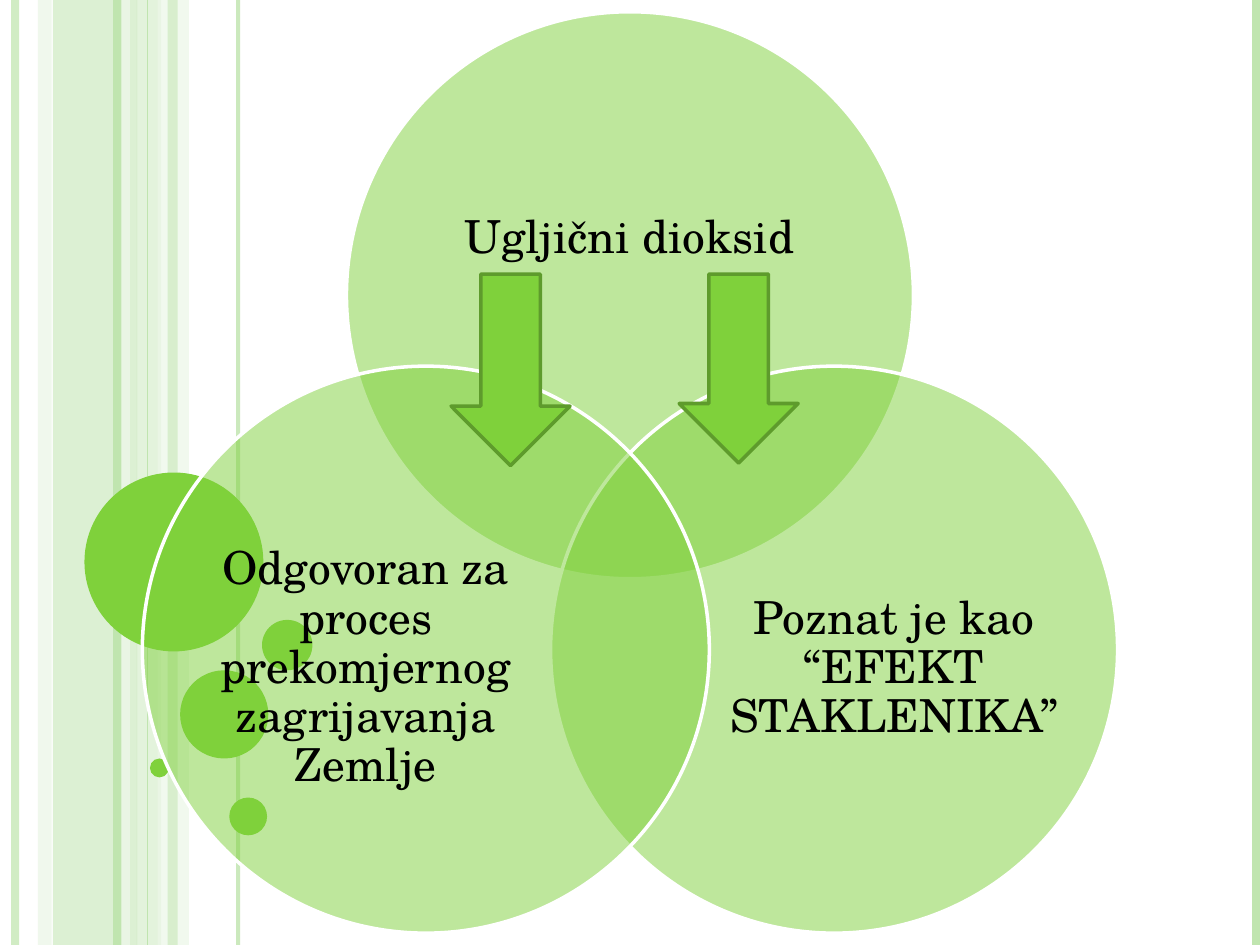
from dataclasses import dataclass

from lxml import etree
from pptx import Presentation
from pptx.dml.color import RGBColor
from pptx.enum.shapes import MSO_CONNECTOR, MSO_SHAPE
from pptx.enum.text import MSO_ANCHOR, PP_ALIGN
from pptx.oxml.ns import qn
from pptx.util import Pt

RECTANGLE = MSO_SHAPE.RECTANGLE
OVAL = MSO_SHAPE.OVAL
DOWN_ARROW = MSO_SHAPE.DOWN_ARROW
STRAIGHT = MSO_CONNECTOR.STRAIGHT
MIDDLE = MSO_ANCHOR.MIDDLE
CENTER = PP_ALIGN.CENTER


@dataclass(frozen=True)
class Theme:
    """Colours, font and type size of the slide."""

    green: str = "7FD13B"
    dark_green: str = "5E9B2C"
    light: str = "C0E5AF"
    pale: str = "D8EECE"
    mist: str = "ECF7E8"
    white: str = "FFFFFF"
    black: str = "000000"
    font: str = "TeX Gyre Schola"
    text_size: int = 26


THEME = Theme()
SLIDE_WIDTH, SLIDE_HEIGHT = 720, 540

BANDS = [
    (30.24, 48.24, THEME.light, 54),
    (21.6, 7.92, THEME.pale, 36),
    (77.76, 14.4, THEME.pale, 70),
    (90, 18, THEME.mist, 71),
]
STRIPES = [
    (8.64, 4.5, THEME.light, 73),
    (72, 4.5, THEME.mist, 83),
    (66.96, 4.5, THEME.light, 100),
    (136.08, 2.25, THEME.light, 82),
    (84.24, 0.75, THEME.light, 100),
    (717.84, 4.5, THEME.light, 100),
]
FRONT_BANDS = [(95.76, 5.76, THEME.light, 51)]
BUBBLES = [
    (0, 0, 102.24),
    (54.72, 113.04, 50.4),
    (37.44, 163.44, 10.8),
    (82.8, 185.76, 21.6),
    (101.52, 84.24, 28.8),
]
VENN_CIRCLES = [
    ("Ugljični dioksid", (0.36, 0), (0.133, 0.175, 0.733, 0.45)),
    ("Poznat je kao “EFEKT STAKLENIKA”", (0.72, 0.625), (0.306, 0.258, 0.6, 0.55)),
    (
        "Odgovoran za proces prekomjernog zagrijavanja Zemlje",
        (0, 0.625),
        (0.094, 0.258, 0.6, 0.55),
    ),
]
ARROWS = [(0, 109.44), (130.32, 108)]


def set_opacity(color_format, percent):
    """Make a solid colour partly transparent."""
    if percent < 100:
        color = color_format._xFill.find(qn("a:srgbClr"))
        etree.SubElement(color, qn("a:alpha"), val=str(percent * 1000))


def add_filled_shape(slide, kind, box, color, opacity=100, outline=None):
    """Add a preset shape with a flat fill and an optional 2 pt outline."""
    shape = slide.shapes.add_shape(kind, *map(Pt, box))
    shape.shadow.inherit = False
    shape.fill.solid()
    shape.fill.fore_color.rgb = RGBColor.from_string(color)
    if opacity < 100:
        color_element = shape.fill._xPr.find(qn("a:solidFill")).find(qn("a:srgbClr"))
        add_alpha(color_element, opacity)
    if outline:
        shape.line.color.rgb = RGBColor.from_string(outline)
        shape.line.width = Pt(2)
    else:
        shape.line.fill.background()
    return shape


def add_alpha(color_element, opacity):
    """Give a colour element an opacity in percent."""
    etree.SubElement(color_element, qn("a:alpha"), val=str(opacity * 1000))


def add_bands(slide, bands, left, top, height):
    """Add translucent vertical bands."""
    for offset, width, color, opacity in bands:
        box = (left + offset, top, width, height)
        add_filled_shape(slide, RECTANGLE, box, color, opacity)


def add_stripes(slide, left, top, height):
    """Add the thin vertical lines."""
    for offset, width, color, opacity in STRIPES:
        x = Pt(left + offset)
        stripe = slide.shapes.add_connector(STRAIGHT, x, Pt(top), x, Pt(top + height))
        stripe.line.color.rgb = RGBColor.from_string(color)
        stripe.line.width = Pt(width)
        properties = stripe._element.spPr
        if opacity < 100:
            add_alpha(next(properties.iter(qn("a:srgbClr"))), opacity)
        etree.SubElement(properties, qn("a:effectLst"))


def add_bubbles(slide, left, top):
    """Add the cluster of solid green dots."""
    for x, y, diameter in BUBBLES:
        box = (left + x, top + y, diameter, diameter)
        add_filled_shape(slide, OVAL, box, THEME.green)


def add_label(slide, text, box):
    """Add centred text without margins."""
    frame = slide.shapes.add_textbox(*map(Pt, box)).text_frame
    frame.word_wrap = True
    frame.vertical_anchor = MIDDLE
    frame.margin_left = frame.margin_right = Pt(0)
    frame.margin_top = frame.margin_bottom = Pt(0)
    frame.text = text
    paragraph = frame.paragraphs[0]
    paragraph.alignment = CENTER
    paragraph.line_spacing = 0.9
    font = paragraph.runs[0].font
    font.name = THEME.font
    font.size = Pt(THEME.text_size)
    font.color.rgb = RGBColor.from_string(THEME.black)


def add_venn(slide, left, top, diameter):
    """Add three overlapping circles, each with its label."""
    for text, (column, row), (x, y, width, height) in VENN_CIRCLES:
        circle_left = left + column * diameter
        circle_top = top + row * diameter
        circle_box = (circle_left, circle_top, diameter, diameter)
        add_filled_shape(slide, OVAL, circle_box, THEME.green, 50, THEME.white)
        label_box = (
            circle_left + x * diameter,
            circle_top + y * diameter,
            width * diameter,
            height * diameter,
        )
        add_label(slide, text, label_box)


def add_arrows(slide, left, top, width):
    """Add the two arrows that point to the lower circles."""
    for offset, height in ARROWS:
        box = (left + offset, top, width, height)
        add_filled_shape(slide, DOWN_ARROW, box, THEME.green, outline=THEME.dark_green)


def main():
    """Build and save the slide."""
    presentation = Presentation()
    presentation.slide_width = Pt(SLIDE_WIDTH)
    presentation.slide_height = Pt(SLIDE_HEIGHT)
    slide = presentation.slides.add_slide(presentation.slide_layouts[6])
    add_bands(slide, BANDS, 0, 0, SLIDE_HEIGHT)
    add_stripes(slide, 0, 0, SLIDE_HEIGHT)
    add_bands(slide, FRONT_BANDS, 0, 0, SLIDE_HEIGHT)
    add_bubbles(slide, 48.24, 270)
    add_venn(slide, 81.36, 6.75, 324)
    add_arrows(slide, 257.76, 156.6, 68)
    presentation.save("out.pptx")


if __name__ == "__main__":
    main()
